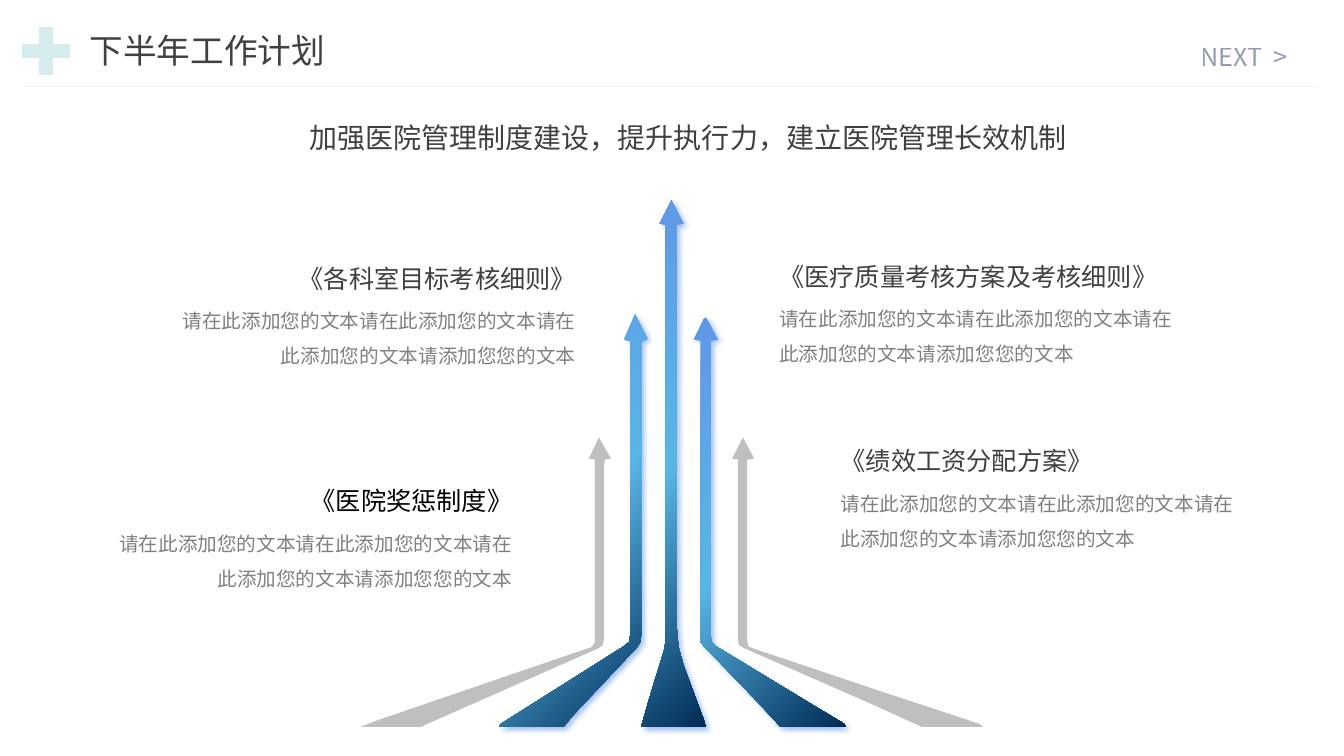
from dataclasses import dataclass

import pptx
import pptx.dml.color
import pptx.enum.shapes
import pptx.enum.text
import pptx.oxml
import pptx.oxml.ns
import pptx.util

PX = 9144  # EMU per px, 100 px to the inch
FONT = "Noto Sans CJK SC"
BODY = "请在此添加您的文本请在此添加您的文本请在此添加您的文本请添加您您的文本"
COLORS = {
    "text": "404040", "black": "000000", "body": "808080", "next": "324274",
    "plus": "D4ECEE", "white": "FFFFFF", "rule": "F2F2F2", "gray": "BFBFBF",
    "top": "6096E6", "middle": "58B6E5", "bottom": "012B55", "shadow": "2169D3",
}
ALIGN = pptx.enum.text.PP_ALIGN
ANCHOR = pptx.enum.text.MSO_ANCHOR
SHAPES = pptx.enum.shapes


@dataclass
class Arrow:
    points: list[tuple[int, int]]
    glossy: bool


@dataclass
class Plan:
    heading: str
    left: int  # left edge of the body text
    top: int
    align: ALIGN
    color: str = "text"


ARROWS = [
    Arrow([(636, 721), (644, 693), (659, 644), (660, 637), (660, 223), (654, 222),
           (666, 198), (678, 222), (671, 223), (671, 619), (673, 642), (678, 660),
           (698, 714), (700, 721)], True),
    Arrow([(495, 721), (497, 718), (619, 641), (624, 637), (625, 631), (625, 338),
           (619, 337), (630, 312), (642, 336), (636, 339), (636, 630), (635, 637),
           (632, 642), (568, 710), (559, 721)], True),
    Arrow([(774, 721), (750, 695), (698, 641), (695, 637), (695, 632), (695, 338),
           (688, 337), (698, 316), (700, 315), (701, 316), (712, 337), (705, 338),
           (705, 631), (706, 637), (710, 641), (807, 700), (837, 718), (839, 721)], True),
    Arrow([(358, 721), (376, 714), (569, 648), (587, 642), (590, 637), (590, 456),
           (584, 455), (594, 434), (606, 455), (600, 456), (599, 462), (599, 634),
           (598, 640), (594, 643), (422, 719), (418, 721)], False),
    Arrow([(914, 721), (870, 701), (738, 643), (733, 640), (732, 634), (732, 456),
           (726, 455), (737, 434), (748, 455), (741, 456), (741, 635), (742, 641),
           (746, 643), (871, 685), (971, 718), (975, 721)], False),
]
PLANS = [
    Plan("《医疗质量考核方案及考核细则》", 763, 239, ALIGN.LEFT),
    Plan("《绩效工资分配方案》", 824, 422, ALIGN.LEFT),
    Plan("《各科室目标考核细则》", 155, 241, ALIGN.RIGHT),
    Plan("《医院奖惩制度》", 92, 462, ALIGN.RIGHT, "black"),
]


def rgb(name: str) -> pptx.dml.color.RGBColor:
    return pptx.dml.color.RGBColor.from_string(COLORS[name])


def xml(source: str):
    tag, rest = source[1:].split(" ", 1)
    return pptx.oxml.parse_xml(f"<{tag} {pptx.oxml.ns.nsdecls('a')} {rest}")


def add_text(shapes, text: str, box: tuple[int, int, int, int], size: int,
             color: str, align: ALIGN = ALIGN.LEFT, spacing: float | None = None,
             middle: bool = False):
    sp = shapes.add_textbox(*(v * PX for v in box))
    tf = sp.text_frame
    tf.word_wrap = True
    if middle:
        tf.vertical_anchor = ANCHOR.MIDDLE
    else:
        tf.auto_size = pptx.enum.text.MSO_AUTO_SIZE.SHAPE_TO_FIT_TEXT
    p = tf.paragraphs[0]
    p.alignment = align
    if spacing:
        p.line_spacing = spacing
    p.font.size = pptx.util.Pt(size)
    p.font.color.rgb = rgb(color)
    p.font.name = FONT
    p.font._element.append(xml(f'<a:ea typeface="{FONT}"/>'))
    p.add_run().text = text
    return p


def add_next(shapes) -> None:
    p = add_text(shapes, "NEXT", (1181, 4, 185, 104), 18, "next", middle=True)
    color = p.font._element.find(".//" + pptx.oxml.ns.qn("a:srgbClr"))
    color.append(xml('<a:alpha val="53000"/>'))
    gap = p.add_run()
    gap.text = " "
    gap.font._element.set("spc", "400")
    p.add_run().text = ">"


def add_arrow(shapes, arrow: Arrow) -> None:
    start, *rest = arrow.points
    builder = shapes.build_freeform(*start, scale=PX)
    builder.add_line_segments(rest, close=True)
    sp = builder.convert_to_shape()
    sp.line.fill.background()
    sp.shadow.inherit = False
    if not arrow.glossy:
        sp.fill.solid()
        sp.fill.fore_color.rgb = rgb("gray")
        return
    stops = "".join(
        f'<a:gs pos="{pos}"><a:srgbClr val="{COLORS[name]}"/></a:gs>'
        for pos, name in ((0, "top"), (50000, "middle"), (100000, "bottom")))
    spPr = sp._element.spPr
    spPr.find(pptx.oxml.ns.qn("a:custGeom")).addnext(xml(
        f'<a:gradFill rotWithShape="1"><a:gsLst>{stops}</a:gsLst>'
        '<a:lin ang="2700000" scaled="0"/></a:gradFill>'))
    spPr.find(pptx.oxml.ns.qn("a:effectLst")).append(xml(
        '<a:outerShdw blurRad="50800" dist="38100" dir="2700000" algn="tl" '
        f'rotWithShape="0"><a:srgbClr val="{COLORS["shadow"]}">'
        '<a:alpha val="40000"/></a:srgbClr></a:outerShdw>'))


def add_plan(shapes, plan: Plan) -> None:
    group = shapes.add_group_shape().shapes
    body_w, heading_w, heading_h = 426, 398, 49
    indent = body_w - heading_w if plan.align == ALIGN.RIGHT else 0
    add_text(group, BODY, (plan.left, plan.top + heading_h, body_w, 77),
             14, "body", plan.align, 1.5)
    add_text(group, plan.heading, (plan.left + indent, plan.top, heading_w, 50),
             18, plan.color, plan.align, 1.5)


def main() -> None:
    prs = pptx.Presentation()
    prs.slide_width, prs.slide_height = 1333 * PX, 750 * PX
    shapes = prs.slides.add_slide(prs.slide_layouts[6]).shapes

    # Header
    add_next(shapes)
    add_text(shapes, "下半年工作计划", (79, 24, 272, 52), 24, "text", middle=True)
    plus = shapes.add_shape(SHAPES.MSO_SHAPE.MATH_PLUS, 12 * PX, 17 * PX, 67 * PX, 67 * PX)
    plus.shadow.inherit = False
    plus.fill.solid()
    plus.fill.fore_color.rgb = rgb("plus")
    plus.line.color.rgb = rgb("white")
    plus.line.width = pptx.util.Pt(1)
    rule = shapes.add_connector(SHAPES.MSO_CONNECTOR.STRAIGHT,
                                23 * PX, 86 * PX, 1306 * PX, 86 * PX)
    rule.line.color.rgb = rgb("rule")
    rule.line.width = pptx.util.Pt(0.5)
    rule._element.spPr.append(xml("<a:effectLst />"))

    # Rising arrows
    for arrow in ARROWS:
        add_arrow(shapes, arrow)

    # Headline and plans
    add_text(shapes, "加强医院管理制度建设，提升执行力，建立医院管理长效机制",
             (184, 115, 997, 44), 20, "text", ALIGN.CENTER)
    for plan in PLANS:
        add_plan(shapes, plan)

    prs.save("out.pptx")


if __name__ == "__main__":
    main()
